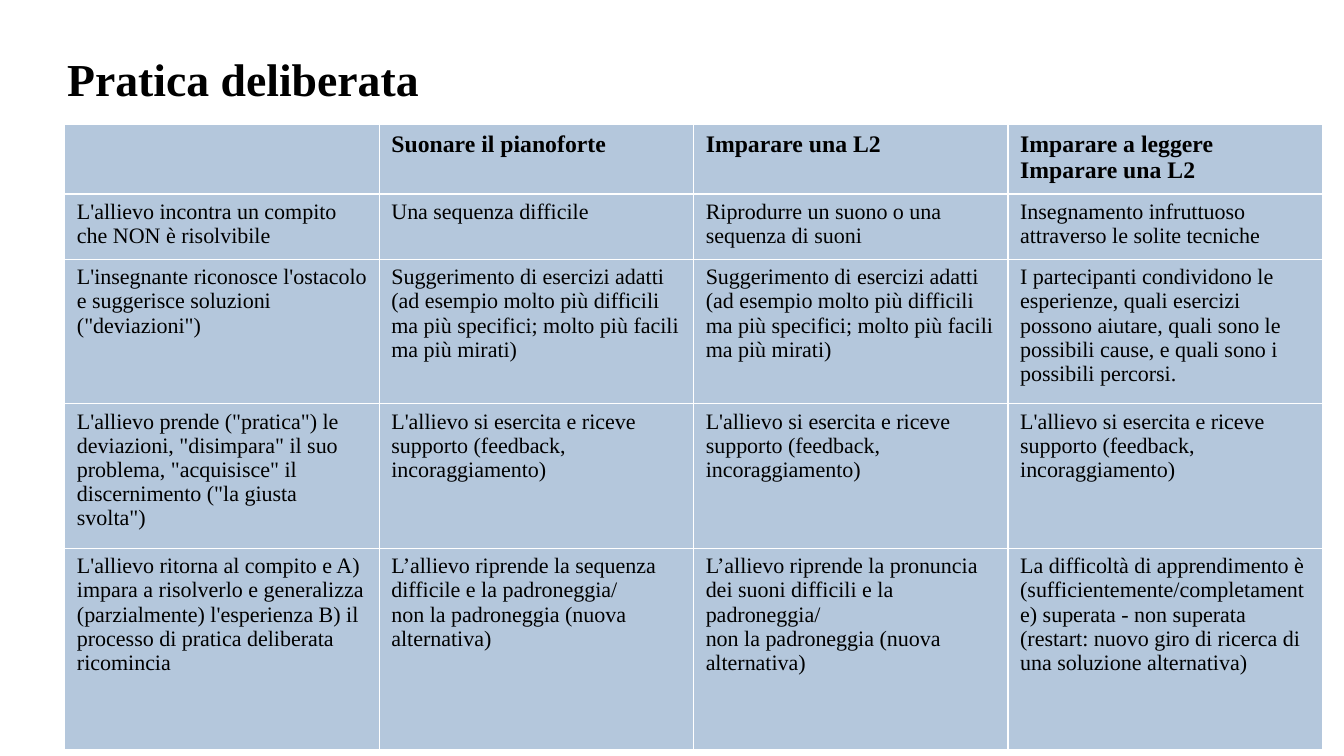
import pptx
import pptx.dml.color
import pptx.enum.text
import pptx.oxml
import pptx.oxml.ns
import pptx.util

Cm = pptx.util.Cm
BLACK = pptx.dml.color.RGBColor(0x00, 0x00, 0x00)
WHITE = pptx.dml.color.RGBColor(0xFF, 0xFF, 0xFF)
LIGHT_BLUE = pptx.dml.color.RGBColor(0xB4, 0xC7, 0xDC)
FONT = "Times New Roman"

COLUMN_WIDTH = 6.55
ROW_HEIGHTS = [1.35, 1.35, 3, 3, 4.19]

EXERCISES = ("Suggerimento di esercizi adatti (ad esempio molto più difficili "
             "ma più specifici; molto più facili ma più mirati)")
SUPPORT = "L'allievo si esercita e riceve supporto (feedback, incoraggiamento)"
ALTERNATIVE = "non la padroneggia (nuova alternativa)"

ROWS = [
    ["", "Suonare il pianoforte", "Imparare una L2",
     "Imparare a leggere\nImparare una L2"],
    ["L'allievo incontra un compito che NON è risolvibile",
     "Una sequenza difficile",
     "Riprodurre un suono o una sequenza di suoni",
     "Insegnamento infruttuoso attraverso le solite tecniche"],
    ["L'insegnante riconosce l'ostacolo e suggerisce soluzioni (\"deviazioni\")",
     EXERCISES,
     EXERCISES,
     "I partecipanti condividono le esperienze, quali esercizi possono aiutare, "
     "quali sono le possibili cause, e quali sono i possibili percorsi."],
    ["L'allievo prende (\"pratica\") le deviazioni, \"disimpara\" il suo problema, "
     "\"acquisisce\" il discernimento (\"la giusta svolta\")",
     SUPPORT,
     SUPPORT,
     SUPPORT],
    ["L'allievo ritorna al compito e A) impara a risolverlo e generalizza "
     "(parzialmente) l'esperienza B) il processo di pratica deliberata ricomincia",
     "L’allievo riprende la sequenza difficile e la padroneggia/\n" + ALTERNATIVE,
     "L’allievo riprende la pronuncia dei suoni difficili e la padroneggia/\n"
     + ALTERNATIVE,
     "La difficoltà di apprendimento è (sufficientemente/completamente) superata "
     "- non superata (restart: nuovo giro di ricerca di una soluzione alternativa)"],
]


def write_text(tf, text, size, bold):
    tf.word_wrap = True
    for i, line in enumerate(text.split("\n")):
        p = tf.paragraphs[0] if i == 0 else tf.add_paragraph()
        if line:
            r = p.add_run()
            r.text = line
            r.font.name = FONT
            r.font.size = pptx.util.Pt(size)
            r.font.bold = bold
            r.font.color.rgb = BLACK


def add_title(s, text):
    sp = s.shapes.add_textbox(Cm(1.4), Cm(0.64), Cm(25.2), Cm(1.98))
    tf = sp.text_frame
    tf.margin_left = tf.margin_top = tf.margin_right = tf.margin_bottom = 0
    tf.vertical_anchor = pptx.enum.text.MSO_ANCHOR.MIDDLE
    write_text(tf, text, 27, True)


def set_borders(cell):
    tc_pr = cell._tc.get_or_add_tcPr()
    for i, side in enumerate(("lnL", "lnR", "lnT", "lnB")):
        border = pptx.oxml.parse_xml(
            f'<a:{side} {pptx.oxml.ns.nsdecls("a")} w="{pptx.util.Pt(0.75)}">'
            f'<a:solidFill><a:srgbClr val="{WHITE}"/></a:solidFill></a:{side}>')
        tc_pr.insert(i, border)


def add_practice_table(s, rows):
    columns = len(rows[0])
    sp = s.shapes.add_table(len(rows), columns, Cm(1.35), Cm(2.6),
                            Cm(COLUMN_WIDTH * columns), Cm(sum(ROW_HEIGHTS)))
    table = sp.table
    table.horz_banding = False
    for column in table.columns:
        column.width = Cm(COLUMN_WIDTH)
    for i, texts in enumerate(rows):
        table.rows[i].height = Cm(ROW_HEIGHTS[i])
        for j, text in enumerate(texts):
            cell = table.cell(i, j)
            cell.fill.solid()
            cell.fill.fore_color.rgb = LIGHT_BLUE
            set_borders(cell)
            write_text(cell.text_frame, text, 14 if i == 0 else 13, i == 0)


def main():
    prs = pptx.Presentation()
    prs.slide_width = Cm(28)
    prs.slide_height = Cm(15.75)
    s = prs.slides.add_slide(prs.slide_layouts[6])
    add_title(s, "Pratica deliberata")
    add_practice_table(s, ROWS)
    prs.save("out.pptx")


if __name__ == "__main__":
    main()
